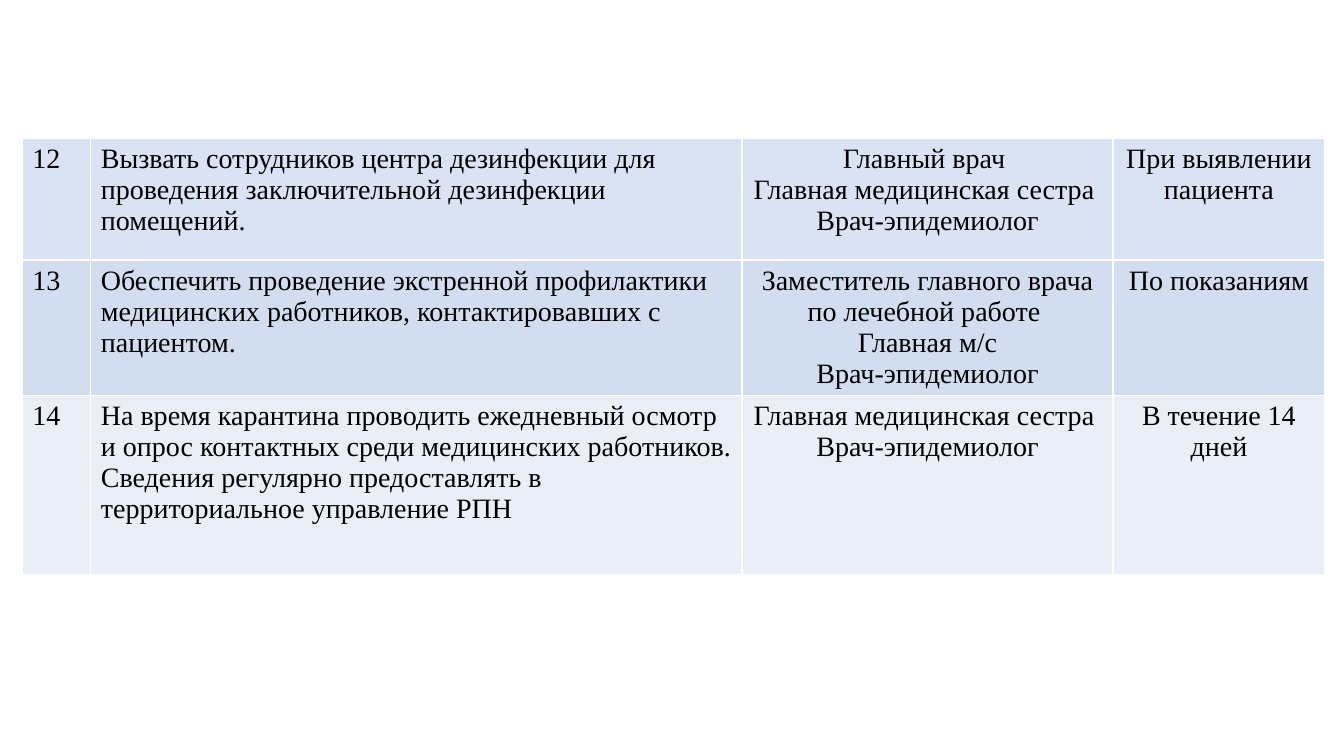
"""Builds a slide with a table of quarantine measures, owners and deadlines."""
from pptx import Presentation
from pptx.dml.color import RGBColor
from pptx.enum.text import PP_ALIGN
from pptx.util import Inches, Pt

COLORS = {"text": "000000", "12": "DAE3F3", "13": "D2DEEF", "14": "EAEFF7"}
COLUMN_WIDTHS = [0.68, 6.46, 3.68, 2.1]
ROW_HEIGHTS = [1.21, 1.34, 1.78]
MEASURES = [
    ("12",
     "Вызвать сотрудников центра дезинфекции для проведения заключительной дезинфекции помещений.",
     "Главный врач \nГлавная медицинская сестра \nВрач-эпидемиолог",
     "При выявлении пациента"),
    ("13",
     "Обеспечить проведение экстренной профилактики медицинских работников, "
     "контактировавших с пациентом.",
     "Заместитель главного врача по лечебной работе \nГлавная м/с\nВрач-эпидемиолог",
     "По показаниям"),
    ("14",
     "На время карантина проводить ежедневный осмотр и опрос контактных среди медицинских "
     "работников. Сведения регулярно предоставлять в территориальное управление РПН",
     "Главная медицинская сестра \nВрач-эпидемиолог",
     "В течение 14 дней"),
]

deck = Presentation()
deck.slide_width = Inches(13.33)
deck.slide_height = Inches(7.5)
page = deck.slides.add_slide(deck.slide_layouts[6])

table = page.shapes.add_table(
    len(MEASURES), len(COLUMN_WIDTHS), Inches(0.22), Inches(1.37),
    Inches(sum(COLUMN_WIDTHS)), Inches(sum(ROW_HEIGHTS))).table
for column, width in zip(table.columns, COLUMN_WIDTHS):
    column.width = Inches(width)

for row, height, measure in zip(table.rows, ROW_HEIGHTS, MEASURES):
    row.height = Inches(height)
    for index, (cell, text) in enumerate(zip(row.cells, measure)):
        cell.fill.solid()
        cell.fill.fore_color.rgb = RGBColor.from_string(COLORS[measure[0]])
        cell.text = text
        for para in cell.text_frame.paragraphs:
            para.alignment = PP_ALIGN.CENTER if index >= 2 else PP_ALIGN.LEFT
            para.font.name = "Times New Roman"
            para.font.size = Pt(20)
            para.font.bold = False
            para.font.color.rgb = RGBColor.from_string(COLORS["text"])

deck.save("out.pptx")
